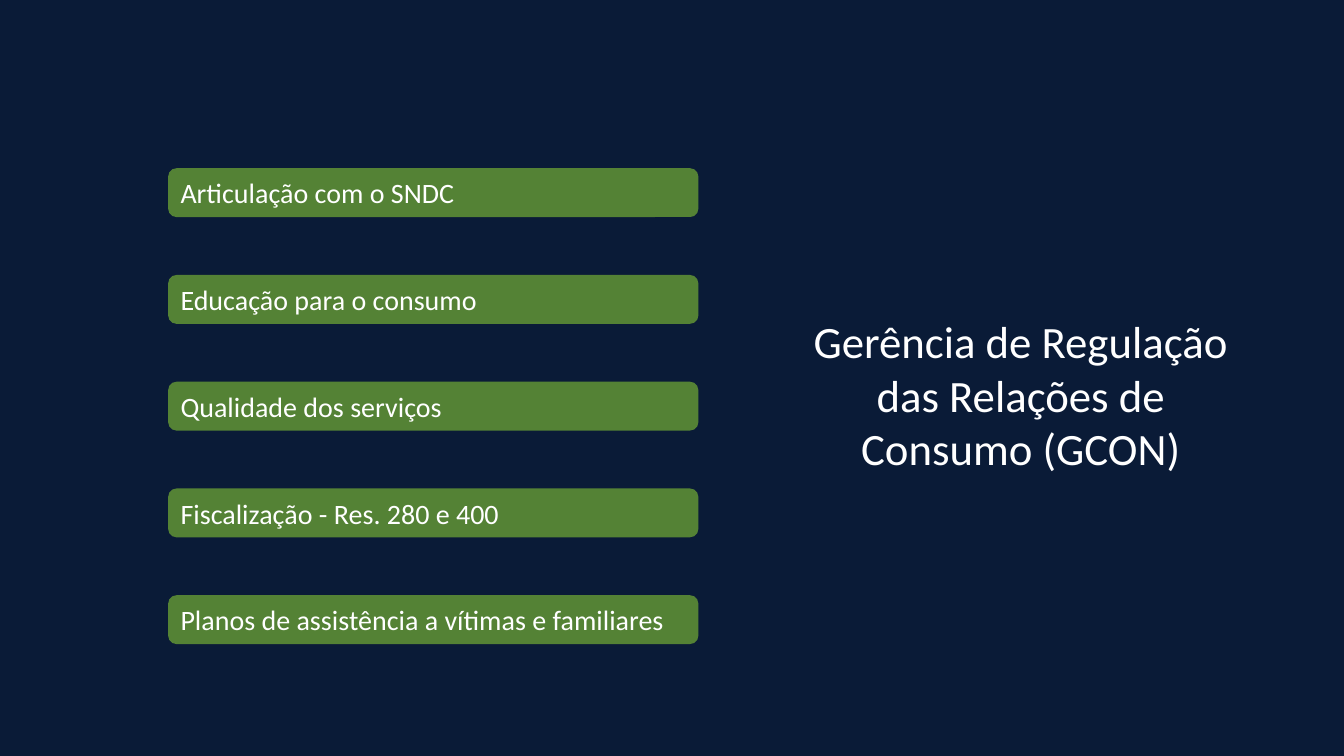
from pptx import Presentation
from pptx import util as u
from pptx.dml import color
from pptx.enum import shapes, text

WIDE, HIGH = 33.87, 19.05
TASKS = [
    "Articulação com o SNDC",
    "Educação para o consumo",
    "Qualidade dos serviços",
    "Fiscalização - Res. 280 e 400",
    "Planos de assistência a vítimas e familiares",
]


def paint(item, code):
    item.fill.solid()
    item.fill.fore_color.rgb = color.RGBColor.from_string(code)


class Deck:
    """Holds the style and the current slide."""

    navy, green, white = "0A1B37", "548235", "FFFFFF"
    font = "Calibri"

    def __init__(self):
        self.file = Presentation()
        self.file.slide_width = u.Cm(WIDE)
        self.file.slide_height = u.Cm(HIGH)
        self.slide = self.file.slides.add_slide(self.file.slide_layouts[5])

    def label(self, shape, words, size, align):
        frame = shape.text_frame
        frame.text = words
        frame.word_wrap = True
        frame.auto_size = text.MSO_AUTO_SIZE.NONE
        frame.vertical_anchor = text.MSO_ANCHOR.MIDDLE
        for para in frame.paragraphs:
            para.alignment = align
            para.line_spacing = 1.0
            for run in para.runs:
                run.font.name = self.font
                run.font.size = u.Pt(size)
                paint(run.font, self.white)

    def block(self, kind, box, code):
        shape = self.slide.shapes.add_shape(kind, *map(u.Cm, box))
        shape.shadow.inherit = False
        shape.line.fill.background()
        paint(shape, code)
        return shape

    def ground(self):
        self.block(shapes.MSO_SHAPE.RECTANGLE, (0, 0, WIDE, HIGH), self.navy)

    def title(self, words, box):
        shape = self.slide.shapes.title
        shape.left, shape.top, shape.width, shape.height = map(u.Cm, box)
        self.label(shape, words, 32, text.PP_ALIGN.CENTER)
        self.slide.shapes._spTree.append(shape._element)

    def bar(self, words, box):
        shape = self.block(shapes.MSO_SHAPE.ROUNDED_RECTANGLE, box, self.green)
        self.label(shape, words, 20, text.PP_ALIGN.LEFT)


def main():
    deck = Deck()
    deck.ground()
    deck.title(
        "Gerência de Regulação\ndas Relações de Consumo (GCON)",
        (19.96, 7.75, 11.53, 4.37),
    )
    for row, task in enumerate(TASKS):
        deck.bar(task, (4.24, 4.24 + 2.69 * row, 13.36, 1.23))
    deck.file.save("out.pptx")


if __name__ == "__main__":
    main()
